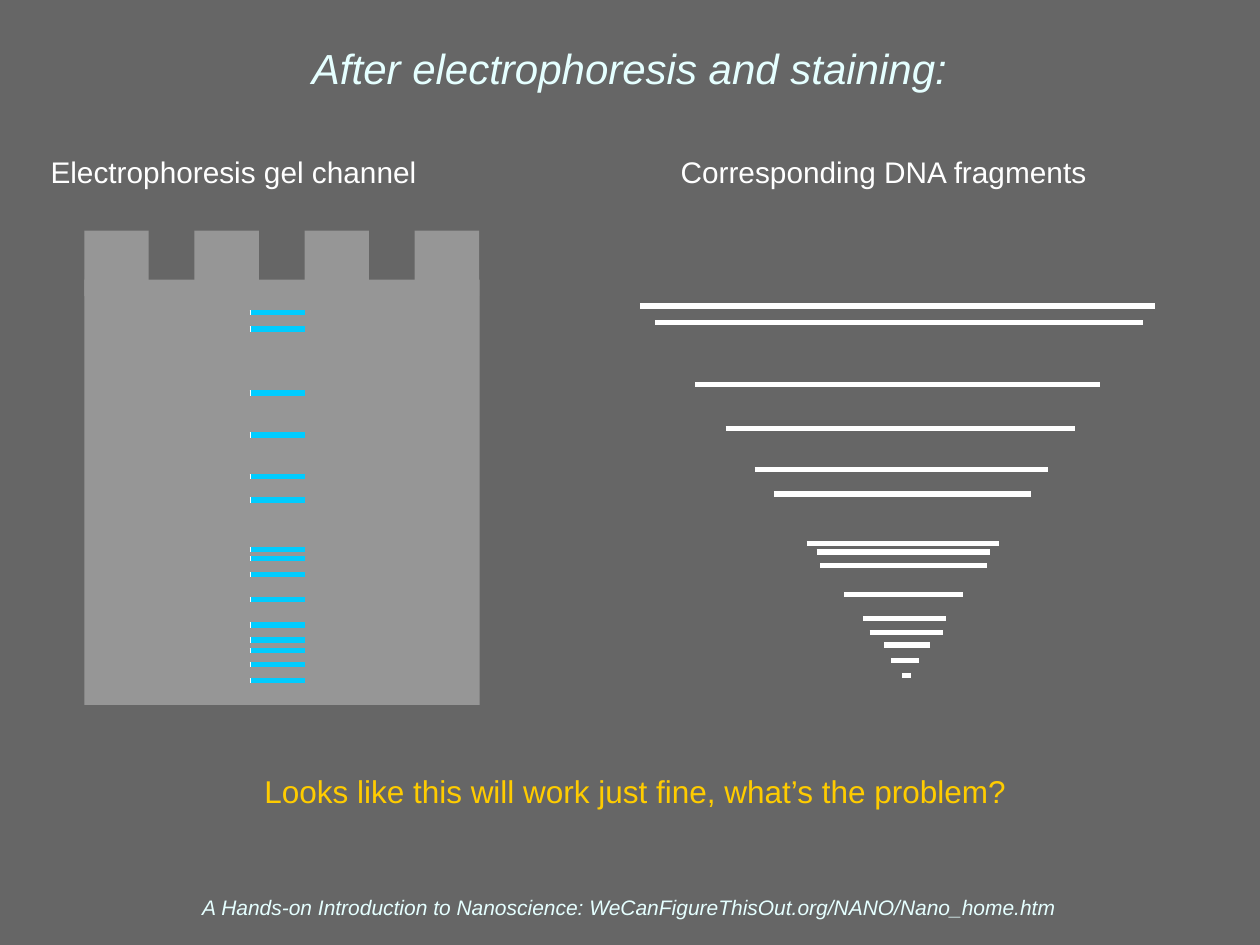
from dataclasses import dataclass

from lxml.etree import SubElement
from pptx import Presentation
from pptx.dml.color import RGBColor as Color
from pptx.enum.shapes import MSO_CONNECTOR as Connector, MSO_SHAPE as Shape
from pptx.enum.text import MSO_ANCHOR as Anchor, PP_ALIGN as Align
from pptx.oxml.ns import qn
from pptx.util import Cm, Pt


@dataclass(frozen=True)
class Theme:
    font: str = "Arial"
    background: str = "666666"
    pale: str = "E5FFFF"
    white: str = "FFFFFF"
    gel: str = "969696"
    dye: str = "00CCFF"
    accent: str = "FFCC00"
    title_size: int = 24
    question_size: int = 18
    heading_size: int = 17
    footer_size: int = 12
    stroke: int = 3


class SlideBuilder:
    def __init__(self, page, theme):
        self.page = page
        self.theme = theme
        fill = page.background.fill
        fill.solid()
        fill.fore_color.rgb = Color.from_string(theme.background)

    def group(self):
        return self.page.shapes.add_group_shape().shapes

    def text(self, bounds, runs, size, color, italic=False,
             align=Align.CENTER, anchor=Anchor.TOP, tab=None):
        box = self.page.shapes.add_textbox(*map(Cm, bounds))
        frame = box.text_frame
        frame.word_wrap = True
        frame.vertical_anchor = anchor
        frame.margin_left = frame.margin_right = Cm(0.13)
        frame.margin_top = frame.margin_bottom = Cm(0.13)
        para = frame.paragraphs[0]
        para.alignment = align
        if tab is not None:
            stops = SubElement(para._p.get_or_add_pPr(), qn("a:tabLst"))
            SubElement(stops, qn("a:tab"), pos=str(Cm(tab)), algn="l")
        for words in runs:
            span = para.add_run()
            span.text = words
            span.font.name = self.theme.font
            span.font.size = Pt(size)
            span.font.italic = italic
            span.font.color.rgb = Color.from_string(color)

    def block(self, group, bounds, color):
        rect = group.add_shape(Shape.RECTANGLE, *map(Cm, bounds))
        rect.shadow.inherit = False
        rect.fill.solid()
        rect.fill.fore_color.rgb = Color.from_string(color)
        rect.line.fill.background()

    def bar(self, group, left, right, height, color):
        """Draw a horizontal line at the given distance from the slide top."""
        line = group.add_connector(
            Connector.STRAIGHT, Cm(left), Cm(height), Cm(right), Cm(height))
        line.line.color.rgb = Color.from_string(color)
        line.line.width = Pt(self.theme.stroke)
        SubElement(line._element.spPr, qn("a:effectLst"))


# Fragment left, right and height, then height of its band in the gel (cm)
FRAGMENTS = [
    (12.90, 23.29, 6.17, 6.30),
    (13.21, 23.04, 6.50, 6.63),
    (14.02, 22.17, 7.75, 7.92),
    (14.63, 21.67, 8.64, 8.77),
    (15.21, 21.13, 9.47, 9.60),
    (15.60, 20.78, 9.96, 10.08),
    (16.26, 20.14, 10.95, 11.07),
    (16.46, 19.96, 11.13, 11.26),
    (16.54, 19.89, 11.40, 11.58),
    (17.02, 19.41, 11.99, 12.09),
    (17.40, 19.08, 12.47, 12.60),
    (17.53, 19.00, 12.75, 12.90),
    (17.83, 18.75, 13.00, 13.11),
    (17.96, 18.52, 13.31, 13.39),
    (18.19, 18.36, 13.61, 13.72),
]
GEL_LEFT, GEL_TOP = 1.70, 5.64
TOOTH_COUNT, TOOTH_STEP = 4, 2.22
BAND_RIGHT = 6.15


def draw_fragments(builder):
    group = builder.group()
    for left, right, height, _ in FRAGMENTS:
        builder.bar(group, left, right, height, builder.theme.white)


def draw_gel(builder):
    theme = builder.theme
    gel = builder.group()
    builder.block(gel, (GEL_LEFT, GEL_TOP, 7.97, 8.57), theme.gel)
    for index in range(TOOTH_COUNT):
        left = GEL_LEFT + index * TOOTH_STEP
        builder.block(gel, (left, 4.65, 1.30, 1.32), theme.gel)
    layers = [(gel, 5.03, theme.white), (builder.group(), 5.05, theme.dye)]
    for group, left, color in layers:
        for *_, height in FRAGMENTS:
            builder.bar(group, left, BAND_RIGHT, height, color)


def main():
    theme = Theme()
    deck = Presentation()
    deck.slide_width, deck.slide_height = Cm(25.4), Cm(19.05)
    builder = SlideBuilder(deck.slides.add_slide(deck.slide_layouts[6]), theme)

    builder.text((0.84, 0.20, 23.70, 2.34),
                 ["After electrophoresis and staining:"],
                 theme.title_size, theme.pale, italic=True, anchor=Anchor.MIDDLE)
    builder.text((0.89, 2.97, 23.93, 0.94),
                 ["Electrophoresis gel channel", "\t", "Corresponding DNA fragments"],
                 theme.heading_size, theme.white, align=Align.LEFT, tab=12.7)
    draw_fragments(builder)
    draw_gel(builder)
    builder.text((0.84, 15.44, 23.93, 0.97),
                 ["Looks like this will work just fine, what’s the problem?"],
                 theme.question_size, theme.accent)
    builder.text((0.84, 17.93, 23.70, 0.74),
                 ["A Hands-on Introduction to Nanoscience: ",
                  "WeCanFigureThisOut.org/NANO/Nano_home.htm"],
                 theme.footer_size, theme.pale, italic=True, anchor=Anchor.BOTTOM)
    deck.save("out.pptx")


if __name__ == "__main__":
    main()
